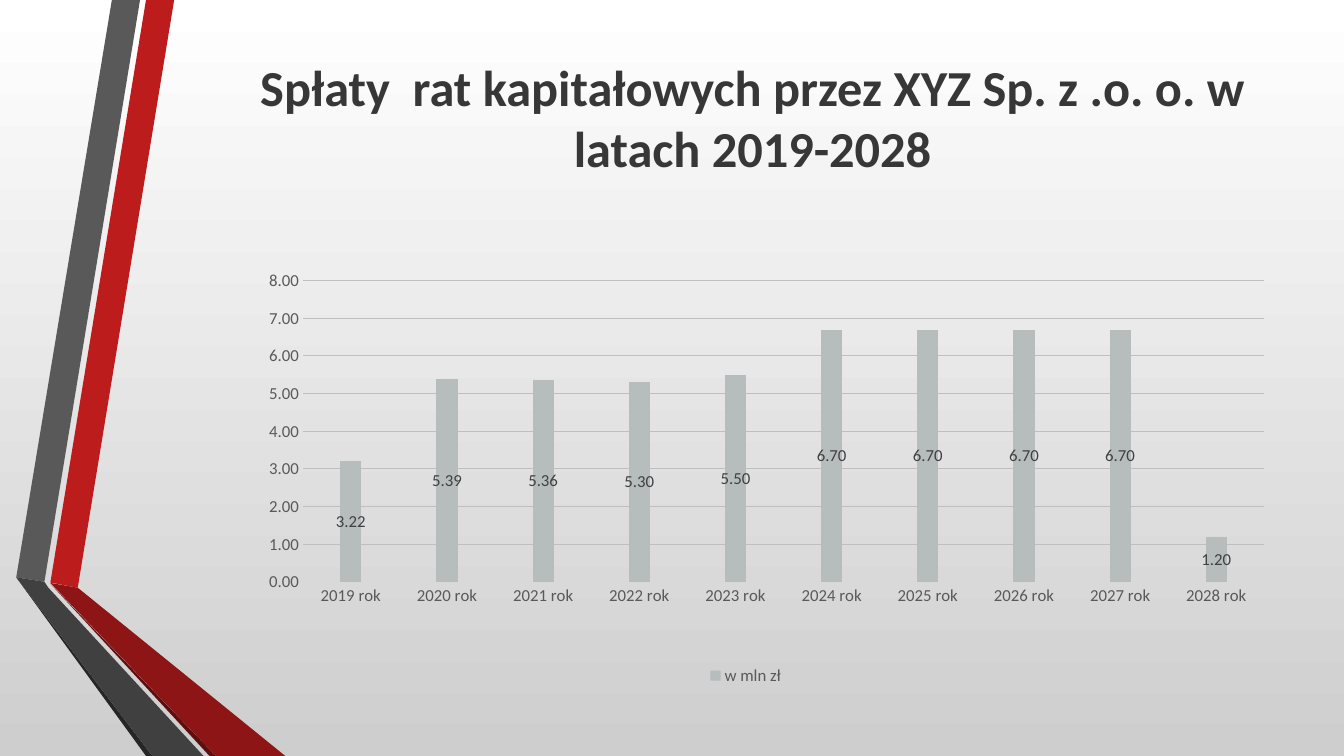
from dataclasses import dataclass

import lxml.etree
import pptx
import pptx.chart.data
import pptx.dml.color
import pptx.enum.chart
import pptx.enum.text
import pptx.oxml
import pptx.oxml.ns
import pptx.util

Cm = pptx.util.Cm
Pt = pptx.util.Pt


@dataclass(frozen=True)
class Theme:
    font: str = "Calibri"
    title_size: int = 36
    chart_size: int = 12
    title: str = "373737"
    axis_text: str = "595959"
    label_text: str = "404040"
    bar: str = "B7BCBD"
    grid: str = "BFBFBF"
    axis_line: str = "D9D9D9"
    background_top: str = "FFFFFF"
    background_bottom: str = "CECECE"


@dataclass(frozen=True)
class Ribbon:
    """One band of the side decoration, with its corners in centimetres."""
    color: str
    corners: tuple[tuple[float, float], ...]


THEME = Theme()
BOTTOM = 19.05
RIBBONS = (
    Ribbon("BC1C1C", ((1.27, 14.68), (1.96, 14.81), (4.39, 0), (3.68, 0))),
    Ribbon("595959", ((3.53, 0), (2.82, 0), (0.41, 14.55), (1.12, 14.66))),
    Ribbon("262626", ((0.41, 14.55), (3.68, BOTTOM), (3.84, BOTTOM))),
    Ribbon("5E0E0E", ((1.27, 14.71), (5.28, BOTTOM), (5.44, BOTTOM))),
    Ribbon("8D1515", ((1.27, 14.69), (5.44, BOTTOM), (7.19, BOTTOM), (1.96, 14.81))),
    Ribbon("404040", ((5.13, BOTTOM), (1.22, 14.81), (1.12, 14.66),
                      (0.41, 14.55), (3.84, BOTTOM))),
)
FIRST_YEAR = 2019
REPAYMENTS = (3.22, 5.39, 5.36, 5.3, 5.5, 6.7, 6.7, 6.7, 6.7, 1.2)
PLOT_AREA = {"x": 0.09, "y": 0.05, "w": 0.89, "h": 0.7}


def rgb(color: str) -> pptx.dml.color.RGBColor:
    return pptx.dml.color.RGBColor.from_string(color)


def format_font(font, *, size: int, color: str, bold: bool = False) -> None:
    font.name = THEME.font
    font.size = Pt(size)
    font.bold = bold
    font.color.rgb = rgb(color)


def paint_background(page) -> None:
    fill = page.background.fill
    fill.gradient()
    fill.gradient_angle = 270
    colors = (THEME.background_top, THEME.background_bottom)
    for stop, color, position in zip(fill.gradient_stops, colors, (0, 1)):
        stop.color.rgb = rgb(color)
        stop.position = position


def draw_ribbon(page, ribbon: Ribbon) -> None:
    start, *others = [(Cm(x), Cm(y)) for x, y in ribbon.corners]
    builder = page.shapes.build_freeform(*start)
    builder.add_line_segments(others, close=True)
    shape = builder.convert_to_shape()
    shape.shadow.inherit = False
    shape.fill.solid()
    shape.fill.fore_color.rgb = rgb(ribbon.color)
    shape.line.fill.background()


def write_title(box, text: str, *, size: int, color: str) -> None:
    """Set the title; its closing line break lifts it above the middle."""
    box.left, box.top, box.width, box.height = Cm(6.17), Cm(1.42), Cm(25.6), Cm(4.57)
    frame = box.text_frame
    frame.word_wrap = True
    frame.auto_size = pptx.enum.text.MSO_AUTO_SIZE.NONE
    frame.vertical_anchor = pptx.enum.text.MSO_ANCHOR.MIDDLE
    para = frame.paragraphs[0]
    para.alignment = pptx.enum.text.PP_ALIGN.CENTER
    format_font(para.font, size=size, color=color, bold=True)
    span = para.add_run()
    span.text = text
    format_font(span.font, size=size, color=color, bold=True)
    para.add_line_break()
    format_font(para.add_run().font, size=size, color=color, bold=True)


def place_plot_area(chart) -> None:
    """Fix the inner plot area as fractions of the chart frame."""
    qn = pptx.oxml.ns.qn
    area = chart.plots[0]._element.getparent()
    for old in area.findall(qn("c:layout")):
        area.remove(old)
    layout = lxml.etree.Element(qn("c:layout"))
    manual = lxml.etree.SubElement(layout, qn("c:manualLayout"))
    settings = {"layoutTarget": "inner", "xMode": "edge", "yMode": "edge", **PLOT_AREA}
    for name, value in settings.items():
        lxml.etree.SubElement(manual, qn(f"c:{name}")).set("val", str(value))
    area.insert(0, layout)


def format_axes(chart) -> None:
    for axis in (chart.category_axis, chart.value_axis):
        axis.major_tick_mark = pptx.enum.chart.XL_TICK_MARK.NONE
        axis.minor_tick_mark = pptx.enum.chart.XL_TICK_MARK.NONE
        format_font(axis.tick_labels.font, size=THEME.chart_size, color=THEME.axis_text)
    values = chart.value_axis
    values.minimum_scale, values.maximum_scale, values.major_unit = 0, 8, 1
    values.tick_labels.number_format = "0.00"
    values.tick_labels.number_format_is_linked = False
    values.format.line.fill.background()
    values.has_major_gridlines = True
    lines = ((values.major_gridlines.format.line, THEME.grid),
             (chart.category_axis.format.line, THEME.axis_line))
    for line, color in lines:
        line.color.rgb = rgb(color)
        line.width = Pt(0.75)


def add_repayment_chart(page) -> None:
    data = pptx.chart.data.CategoryChartData(number_format="0.00")
    data.categories = [f"{FIRST_YEAR + index} rok" for index in range(len(REPAYMENTS))]
    data.add_series("w mln zł", REPAYMENTS)
    chart = page.shapes.add_chart(
        pptx.enum.chart.XL_CHART_TYPE.COLUMN_CLUSTERED,
        Cm(5.18), Cm(6.53), Cm(27.23), Cm(10.85), data,
    ).chart
    chart.has_title = False
    format_font(chart.font, size=THEME.chart_size, color=THEME.axis_text)
    place_plot_area(chart)
    format_axes(chart)

    plot = chart.plots[0]
    plot.vary_by_categories = False
    plot.gap_width = 355
    plot.overlap = -70
    series = plot.series[0]
    series.format.fill.solid()
    series.format.fill.fore_color.rgb = rgb(THEME.bar)
    labels = series.data_labels
    labels.show_value = True
    labels.number_format = "0.00"
    labels.number_format_is_linked = False
    labels.position = pptx.enum.chart.XL_LABEL_POSITION.CENTER
    format_font(labels.font, size=THEME.chart_size, color=THEME.label_text)

    chart.has_legend = True
    chart.legend.position = pptx.enum.chart.XL_LEGEND_POSITION.BOTTOM
    chart.legend.include_in_layout = False
    format_font(chart.legend.font, size=THEME.chart_size, color=THEME.axis_text)


def main() -> None:
    deck = pptx.Presentation()
    deck.slide_width, deck.slide_height = Cm(33.87), Cm(BOTTOM)
    page = deck.slides.add_slide(deck.slide_layouts.get_by_name("Title Only"))
    paint_background(page)
    for ribbon in RIBBONS:
        draw_ribbon(page, ribbon)
    write_title(page.shapes.title,
                "Spłaty  rat kapitałowych przez XYZ Sp. z .o. o. w latach 2019-2028",
                size=THEME.title_size, color=THEME.title)
    add_repayment_chart(page)
    deck.save("out.pptx")


if __name__ == "__main__":
    main()
